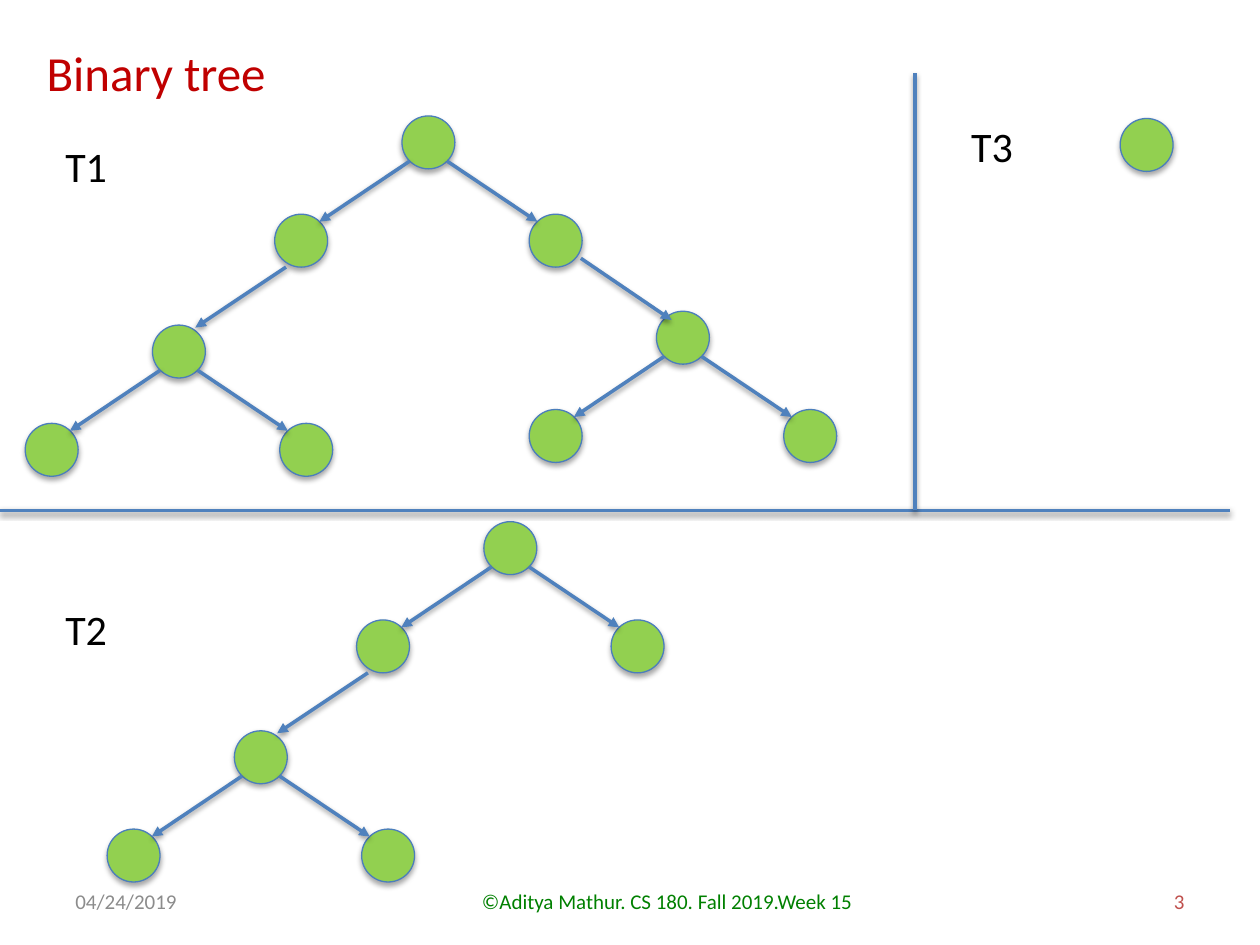
from dataclasses import dataclass

from lxml import etree
from pptx import Presentation
from pptx import util as u
from pptx.dml.color import RGBColor
from pptx.enum import shapes, text
from pptx.oxml.ns import qn

# The slide is a grid of 100 columns by 75 rows.
COLUMNS, ROWS = 100, 75
CELL = u.Inches(0.1)
NODE_SIZE = 4.2
BLUE, GREEN, NODE_EDGE = "4F81BD", "92D050", "4B7EBC"


@dataclass(frozen=True)
class Point:
    column: float
    row: float

    def moved(self, columns: float, rows: float) -> "Point":
        return Point(self.column + columns, self.row + rows)


@dataclass(frozen=True)
class Label:
    words: str
    corner: Point
    width: float
    height: float
    size: int
    color: str
    align: text.PP_ALIGN = text.PP_ALIGN.LEFT
    anchor: text.MSO_ANCHOR = text.MSO_ANCHOR.TOP
    wrap: bool = True


def cells(count: float) -> int:
    return round(count * CELL)


def rgb(color: str) -> RGBColor:
    return RGBColor.from_string(color)


def add_shadow(properties, opacity: int, distance: float) -> None:
    """Give a shape's spPr a soft shadow straight below it."""
    effects = properties.find(qn("a:effectLst"))
    if effects is None:
        effects = etree.SubElement(properties, qn("a:effectLst"))
    shadow = etree.SubElement(
        effects, qn("a:outerShdw"), blurRad=str(u.Pt(3.1)),
        dist=str(u.Pt(distance)), dir="5400000", rotWithShape="0")
    black = etree.SubElement(shadow, qn("a:srgbClr"), val="000000")
    etree.SubElement(black, qn("a:alpha"), val=str(opacity * 1000))


def add_line(slide, start: Point, end: Point, arrow: bool = False) -> None:
    connector = slide.shapes.add_connector(
        shapes.MSO_CONNECTOR.STRAIGHT, cells(start.column), cells(start.row),
        cells(end.column), cells(end.row))
    connector.line.color.rgb = rgb(BLUE)
    connector.line.width = u.Pt(2)
    if arrow:
        etree.SubElement(connector.line._get_or_add_ln(), qn("a:tailEnd"), type="triangle")
    add_shadow(connector._element.spPr, 38, 1.6)


def add_node(slide, corner: Point) -> None:
    node = slide.shapes.add_shape(
        shapes.MSO_SHAPE.OVAL, cells(corner.column), cells(corner.row),
        cells(NODE_SIZE), cells(NODE_SIZE))
    node.fill.solid()
    node.fill.fore_color.rgb = rgb(GREEN)
    node.line.color.rgb = rgb(NODE_EDGE)
    node.line.width = u.Pt(0.75)
    node.shadow.inherit = False
    add_shadow(node._element.spPr, 35, 1.8)


def add_fork(slide, parent: Point) -> None:
    """Draw a parent node with its left and right child."""
    add_node(slide, parent)
    for side in (-1, 1):
        add_node(slide, parent.moved(side * 10.1, 7.8))
        middle = parent.moved(NODE_SIZE / 2, 0)
        add_line(slide, middle.moved(side * 1.5, 3.6),
                 middle.moved(side * 8.65, 8.4), arrow=True)


def fill_label(shape, label: Label) -> None:
    shape.left, shape.top = cells(label.corner.column), cells(label.corner.row)
    shape.width, shape.height = cells(label.width), cells(label.height)
    frame = shape.text_frame
    frame.text = label.words
    frame.word_wrap = label.wrap
    frame.auto_size = text.MSO_AUTO_SIZE.NONE
    frame.vertical_anchor = label.anchor
    paragraph = frame.paragraphs[0]
    paragraph.alignment = label.align
    paragraph.font.name = "Calibri"
    paragraph.font.size = u.Pt(label.size)
    paragraph.font.color.rgb = rgb(label.color)


def tree_label(words: str, column: float, row: float) -> Label:
    return Label(words, Point(column, row), 5.4, 5, 24, "000000", wrap=False)


def footer_label(words: str, column: float, width: float, color: str,
                 align: text.PP_ALIGN) -> Label:
    return Label(words, Point(column, 69.5), width, 4, 12, color, align,
                 text.MSO_ANCHOR.MIDDLE)


TITLE = Label("Binary tree", Point(2.7, 2.9), 27.9, 5.7, 28, "C00000")
LABELS = [
    footer_label("04/24/2019", 5, 23.3, "8C8C8C", text.PP_ALIGN.LEFT),
    footer_label("©Aditya Mathur. CS 180. Fall 2019.Week 15", 34.2, 37.5, "008000",
                 text.PP_ALIGN.CENTER),
    footer_label("3", 71.7, 23.3, "C0504D", text.PP_ALIGN.RIGHT),
    tree_label("T1", 4.2, 10.7),
    tree_label("T2", 4.2, 47.4),
    tree_label("T3", 76.1, 9.1),
]
T1_ROOT, T2_ROOT, T3_ROOT = Point(31.9, 9.2), Point(38.4, 41.4), Point(88.9, 9.4)
DIVIDER_ROW, DIVIDER_COLUMN = 40.5, 72.6


def main() -> None:
    presentation = Presentation()
    presentation.slide_width, presentation.slide_height = cells(COLUMNS), cells(ROWS)
    slide = presentation.slides.add_slide(presentation.slide_layouts[5])
    fill_label(slide.shapes.title, TITLE)
    for label in LABELS:
        fill_label(slide.shapes.add_textbox(0, 0, 0, 0), label)

    add_line(slide, Point(0, DIVIDER_ROW), Point(97.6, DIVIDER_ROW))
    add_line(slide, Point(DIVIDER_COLUMN, 5.8), Point(DIVIDER_COLUMN, DIVIDER_ROW))

    for root in (T1_ROOT, T2_ROOT):
        add_fork(slide, root)
        add_fork(slide, root.moved(-19.8, 16.6))
        add_line(slide, root.moved(-9.2, 12), root.moved(-16.4, 16.8), arrow=True)
    add_fork(slide, T1_ROOT.moved(20.2, 15.5))
    add_line(slide, T1_ROOT.moved(14.2, 11.3), T1_ROOT.moved(21.4, 16.2), arrow=True)
    add_node(slide, T3_ROOT)

    presentation.save("out.pptx")


if __name__ == "__main__":
    main()
